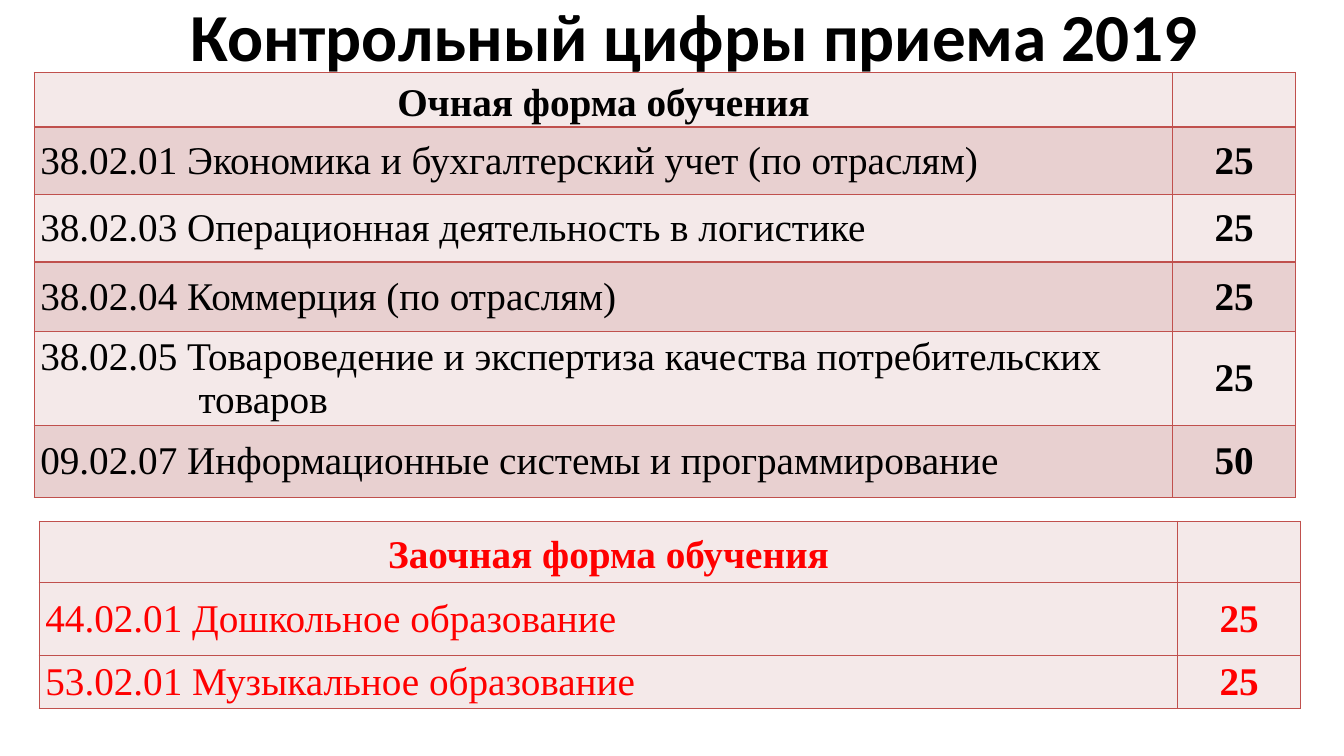
from dataclasses import dataclass

from lxml import etree
from pptx import Presentation
from pptx.dml.color import RGBColor
from pptx.enum.text import MSO_ANCHOR, MSO_AUTO_SIZE, PP_ALIGN
from pptx.oxml.ns import qn
from pptx.util import Inches, Pt

LEFT, CENTER = PP_ALIGN.LEFT, PP_ALIGN.CENTER
MIDDLE = MSO_ANCHOR.MIDDLE
GROW = MSO_AUTO_SIZE.SHAPE_TO_FIT_TEXT


@dataclass(frozen=True)
class Theme:
    black: str = "000000"
    red: str = "FF0000"
    light: str = "F4E9E9"
    dark: str = "E8D0D0"
    line: str = "C0504D"
    head: str = "Calibri"
    body: str = "Times New Roman"
    big: int = 48
    size: int = 28


THEME = Theme()
COLS = (11.29, 1.22)
HANG = 1.57

DAY = [
    ("Очная форма обучения", ""),
    ("38.02.01 Экономика и бухгалтерский учет (по отраслям)", "25"),
    ("38.02.03 Операционная деятельность в логистике", "25"),
    ("38.02.04 Коммерция (по отраслям)", "25"),
    ("38.02.05 Товароведение и экспертиза качества потребительских товаров", "25"),
    ("09.02.07 Информационные системы и программирование", "50"),
]
AWAY = [
    ("Заочная форма обучения", ""),
    ("44.02.01 Дошкольное образование", "25"),
    ("53.02.01 Музыкальное образование", "25"),
]


def add_run(para, text, font, size, color, bold):
    run = para.add_run()
    run.text = text
    run.font.name = font
    run.font.size = Pt(size)
    run.font.bold = bold
    run.font.color.rgb = RGBColor.from_string(color)


def add_title(slide, box, text):
    shape = slide.shapes.add_textbox(*map(Inches, box))
    frame = shape.text_frame
    frame.word_wrap = True
    frame.auto_size = GROW
    para = frame.paragraphs[0]
    para.alignment = CENTER
    add_run(para, text, THEME.head, THEME.big, THEME.black, True)


def add_edges(cell):
    props = cell._tc.get_or_add_tcPr()
    for spot, side in enumerate(("lnL", "lnR", "lnT", "lnB")):
        edge = etree.Element(qn("a:" + side), w=str(Pt(1)))
        fill = etree.SubElement(edge, qn("a:solidFill"))
        etree.SubElement(fill, qn("a:srgbClr"), val=THEME.line)
        props.insert(spot, edge)


def fill_cell(cell, text, color, back, head, count, hang):
    cell.fill.solid()
    cell.fill.fore_color.rgb = RGBColor.from_string(back)
    add_edges(cell)
    if not text:
        return
    cell.vertical_anchor = MIDDLE
    cell.margin_left = cell.margin_right = Inches(0.06)
    cell.margin_top = cell.margin_bottom = 0
    para = cell.text_frame.paragraphs[0]
    para.alignment = CENTER if head or count else LEFT
    para.space_before = para.space_after = Pt(6)
    if head:
        para.line_spacing = 1.15
    if hang:
        props = para._p.get_or_add_pPr()
        props.set("marL", str(Inches(HANG)))
        props.set("indent", str(Inches(-HANG)))
    add_run(para, text, THEME.body, THEME.size, color, head or count)


def add_plan(slide, left, top, rows, highs, color, backs, hang=None):
    box = (left, top, sum(COLS), sum(highs))
    frame = slide.shapes.add_table(len(rows), len(COLS), *map(Inches, box))
    table = frame.table
    table.first_row = table.horz_banding = False
    for col, wide in zip(table.columns, COLS):
        col.width = Inches(wide)
    for r, (row, high) in enumerate(zip(rows, highs)):
        table.rows[r].height = Inches(high)
        back = backs[r % len(backs)]
        for c, text in enumerate(row):
            fill_cell(table.cell(r, c), text, color, back,
                      r == 0, c == 1, r == hang and c == 0)


def main():
    deck = Presentation()
    deck.slide_width, deck.slide_height = Inches(13.33), Inches(7.5)
    slide = deck.slides.add_slide(deck.slide_layouts[6])
    add_title(slide, (1.56, -0.11, 10.66, 0.91), "Контрольный цифры приема 2019")
    add_plan(slide, 0.39, 5.17, AWAY, (0.61, 0.72, 0.53),
             THEME.red, (THEME.light,))
    add_plan(slide, 0.34, 0.72, DAY, (0.54, 0.67, 0.67, 0.69, 0.93, 0.71),
             THEME.black, (THEME.light, THEME.dark), hang=4)
    deck.save("out.pptx")


if __name__ == "__main__":
    main()
